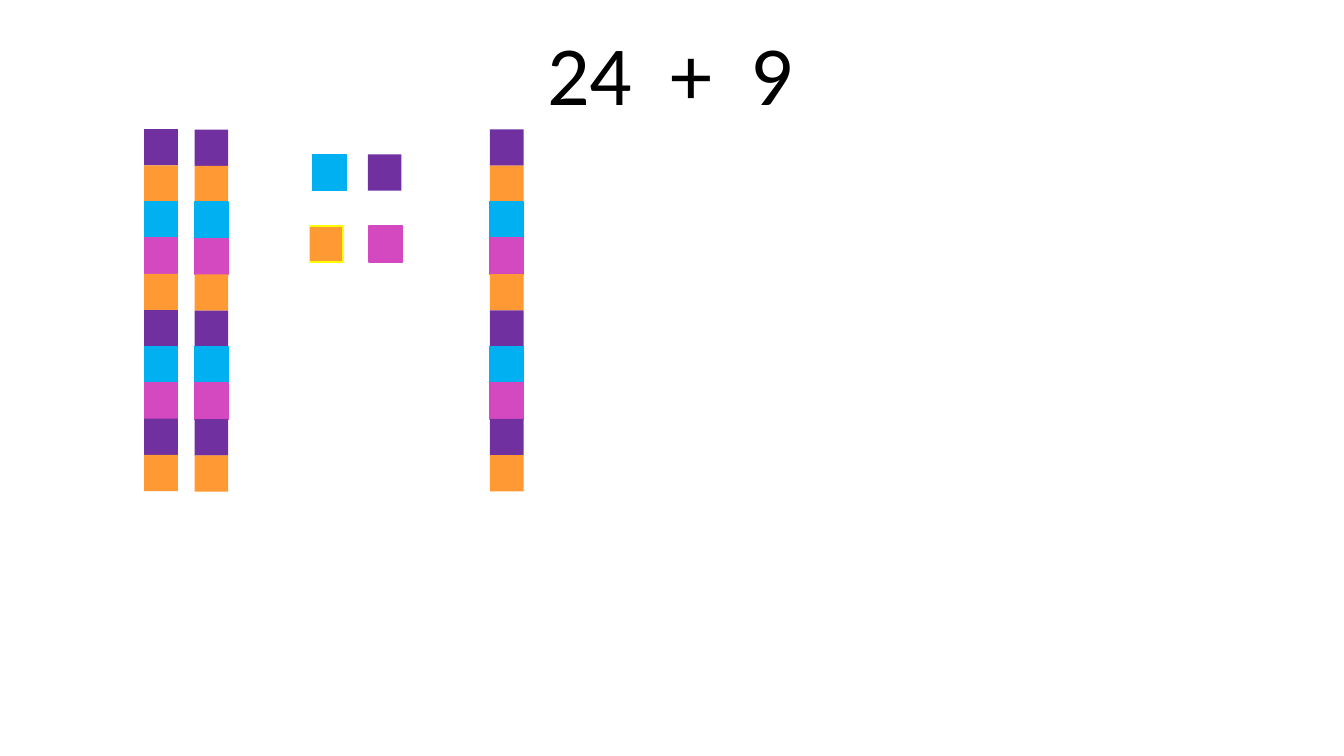
import pptx
import pptx.util
import pptx.dml.color
import pptx.enum.shapes
import pptx.enum.text

Pt = pptx.util.Pt
PURPLE, ORANGE, BLUE, PINK = "7030A0", "FF9933", "00B0F0", "D549C0"
YELLOW, BLACK = "FFFF00", "000000"
CUBE_WIDTH, CUBE_HEIGHT = 24, 26


def color(hex_string):
    return pptx.dml.color.RGBColor.from_string(hex_string)


def add_cube(shapes, left, top, fill, outline=None):
    cube = shapes.add_shape(pptx.enum.shapes.MSO_SHAPE.RECTANGLE,
                            Pt(left), Pt(top), Pt(CUBE_WIDTH), Pt(CUBE_HEIGHT))
    cube.shadow.inherit = False
    cube.fill.solid()
    cube.fill.fore_color.rgb = color(fill)
    if outline:
        cube.line.color.rgb = color(outline)
        cube.line.width = Pt(1)
    else:
        cube.line.fill.background()


deck = pptx.Presentation()
deck.slide_width, deck.slide_height = Pt(960), Pt(540)
slide = deck.slides.add_slide(deck.slide_layouts[5])

# Sum, with widened spaces around the plus sign
problem = slide.shapes.title
problem.left, problem.top, problem.width, problem.height = Pt(-1.5), Pt(8.6), Pt(960), Pt(101.5)
frame = problem.text_frame
frame.word_wrap = True
frame.auto_size = pptx.enum.text.MSO_AUTO_SIZE.NONE
frame.vertical_anchor = pptx.enum.text.MSO_ANCHOR.TOP
frame.margin_top = Pt(6.5)
sum_line = frame.paragraphs[0]
sum_line.alignment = pptx.enum.text.PP_ALIGN.CENTER
for part in ("24", " ", "+", " ", "9"):
    run = sum_line.add_run()
    run.text = part
    run.font.name = "Calibri"
    run.font.size = Pt(60)
    run.font.color.rgb = color(BLACK)
    if part == " ":
        run.font._element.set("spc", "1360")

# Loose ones
for left, top, fill, outline in (
    (221, 161.3, ORANGE, YELLOW),
    (223.3, 110.2, BLUE, BLUE),
    (263.5, 161.3, PINK, PINK),
    (262.8, 110.2, PURPLE, None),
):
    add_cube(slide.shapes, left, top, fill, outline)

# Rods of ten
ROD_COLORS = (PURPLE, ORANGE, BLUE, PINK, ORANGE, PURPLE, BLUE, PINK, PURPLE, ORANGE)
CUBE_STEP = 25.85
for left, top in ((103, 92.2), (139, 92.6), (350, 92.4)):
    rod = slide.shapes.add_group_shape()
    for position, fill in enumerate(ROD_COLORS):
        outline = fill if fill in (BLUE, PINK) else None
        add_cube(rod.shapes, left, top + position * CUBE_STEP, fill, outline)

deck.save("out.pptx")
